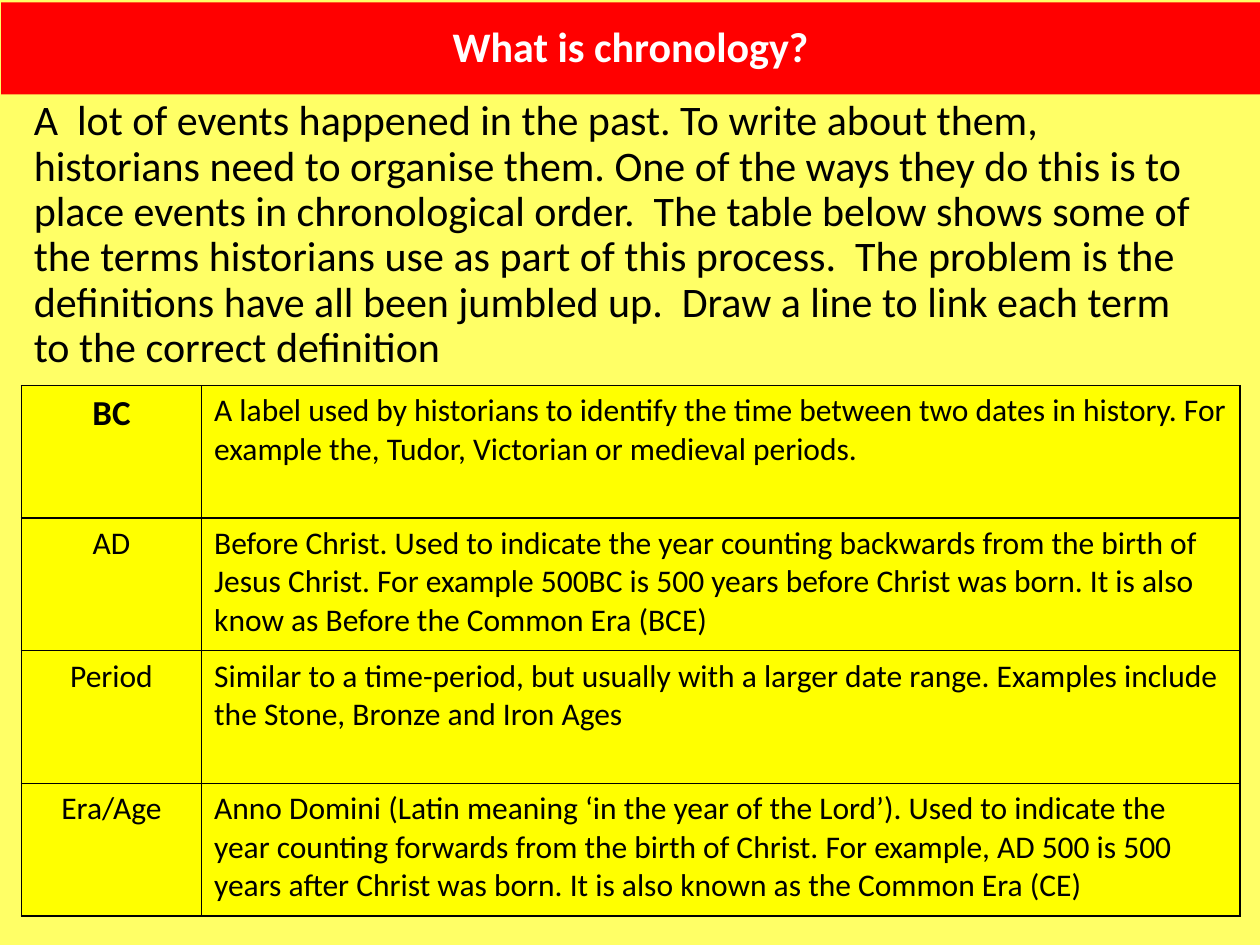
import pptx
import pptx.util
import pptx.dml.color
import pptx.enum.shapes
import pptx.enum.text
import pptx.oxml.ns
import lxml.etree

Inches = pptx.util.Inches
Pt = pptx.util.Pt
PP_ALIGN = pptx.enum.text.PP_ALIGN
MSO_ANCHOR = pptx.enum.text.MSO_ANCHOR

INTRO = (
    "A  lot of events happened in the past. To write about them, historians need to "
    "organise them. One of the ways they do this is to place events in chronological "
    "order.  The table below shows some of the terms historians use as part of this "
    "process.  The problem is the definitions have all been jumbled up.  Draw a line "
    "to link each term to the correct definition"
)

TERMS = [
    ("BC", "A label used by historians to identify the time between two dates in history. "
           "For example the, Tudor, Victorian or medieval periods."),
    ("AD", "Before Christ. Used to indicate the year counting backwards from the birth of "
           "Jesus Christ. For example 500BC is 500 years before Christ was born. It is also "
           "know as Before the Common Era (BCE)"),
    ("Period", "Similar to a time-period, but usually with a larger date range. Examples "
               "include the Stone, Bronze and Iron Ages"),
    ("Era/Age", "Anno Domini (Latin meaning ‘in the year of the Lord’). Used to indicate the "
                "year counting forwards from the birth of Christ. For example, AD 500 is 500 "
                "years after Christ was born. It is also known as the Common Era (CE)"),
]


def rgb(value):
    return pptx.dml.color.RGBColor.from_string(value)


class Deck:
    font = "Calibri"
    ink = "000000"
    background = "FFFF66"
    banner_fill = "FF0000"
    banner_ink = "FFFFFF"
    cell_fill = "FFFF00"

    def __init__(self, width, height):
        self.prs = pptx.Presentation()
        self.prs.slide_width = Inches(width)
        self.prs.slide_height = Inches(height)
        self.s = self.prs.slides.add_slide(self.prs.slide_layouts[6])
        self.fill(self.s.background, self.background)

    def fill(self, target, color):
        target.fill.solid()
        target.fill.fore_color.rgb = rgb(color)

    def add_text(self, tf, text, size, color=ink, bold=False, align=PP_ALIGN.LEFT):
        p = tf.paragraphs[0]
        p.alignment = align
        r = p.add_run()
        r.text = text
        r.font.name = self.font
        r.font.size = Pt(size)
        r.font.bold = bold
        r.font.color.rgb = rgb(color)
        return p

    def paragraph(self, box, text):
        tf = self.s.shapes.add_textbox(*map(Inches, box)).text_frame
        tf.word_wrap = True
        p = self.add_text(tf, text, 24)
        p.line_spacing = 0.9
        p.space_before = Pt(10)

    def banner(self, box, text):
        sp = self.s.shapes.add_shape(
            pptx.enum.shapes.MSO_SHAPE.RECTANGLE, *map(Inches, box))
        sp.shadow.inherit = False
        self.fill(sp, self.banner_fill)
        sp.line.fill.background()
        tf = sp.text_frame
        tf.word_wrap = True
        tf.vertical_anchor = MSO_ANCHOR.MIDDLE
        p = self.add_text(tf, text, 24, self.banner_ink, True, PP_ALIGN.CENTER)
        p.line_spacing = 0.9

    def border(self, cell):
        tc_pr = cell._tc.get_or_add_tcPr()
        qn = pptx.oxml.ns.qn
        for i, side in enumerate(("a:lnL", "a:lnR", "a:lnT", "a:lnB")):
            ln = lxml.etree.Element(qn(side), w=str(Pt(1)))
            solid = lxml.etree.SubElement(ln, qn("a:solidFill"))
            lxml.etree.SubElement(solid, qn("a:srgbClr"), val=self.ink)
            tc_pr.insert(i, ln)

    def table(self, box, widths, rows):
        table = self.s.shapes.add_table(
            len(rows), len(widths), *map(Inches, box)).table
        for column, width in zip(table.columns, widths):
            column.width = Inches(width)
        for i, row in enumerate(rows):
            for j, text in enumerate(row):
                cell = table.cell(i, j)
                self.fill(cell, self.cell_fill)
                self.border(cell)
                lead = i == 0 and j == 0
                align = PP_ALIGN.CENTER if j == 0 else PP_ALIGN.LEFT
                self.add_text(cell.text_frame, text, 20 if lead else 18,
                              bold=lead, align=align)


def main():
    deck = Deck(10, 7.5)
    deck.paragraph((0.17, 0.74, 9.51, 2.32), INTRO)
    deck.table((0.17, 3.06, 9.67, 4.21), (1.43, 8.24), TERMS)
    deck.banner((0.01, 0.02, 9.99, 0.73), "What is chronology?")
    deck.prs.save("out.pptx")


if __name__ == "__main__":
    main()
